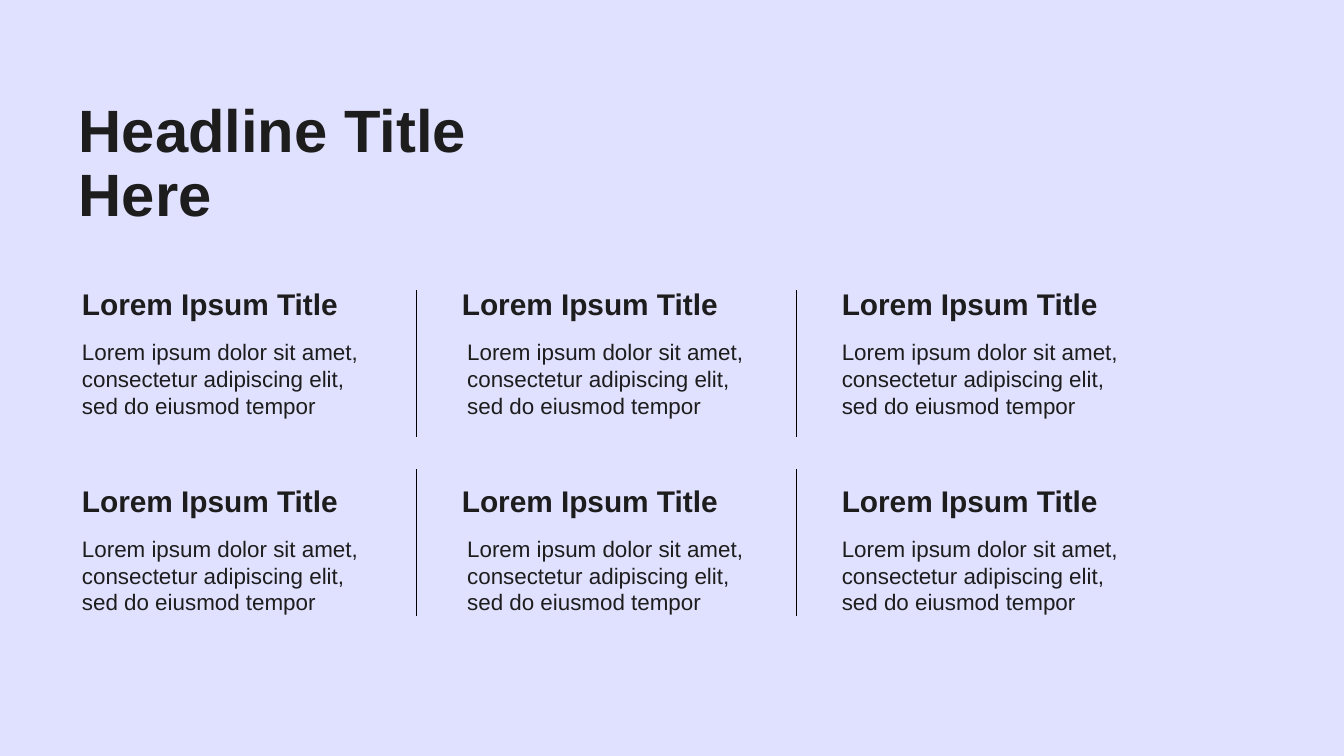
from lxml import etree
from pptx import Presentation
from pptx.dml.color import RGBColor
from pptx.enum.shapes import MSO_CONNECTOR
from pptx.enum.text import MSO_ANCHOR, PP_ALIGN
from pptx.oxml.ns import qn
from pptx.util import Cm, Pt

STRAIGHT = MSO_CONNECTOR.STRAIGHT
TOP = MSO_ANCHOR.TOP
LEFT = PP_ALIGN.LEFT

LAVENDER = RGBColor(0xE0, 0xE0, 0xFF)
INK = RGBColor(0x1D, 0x1D, 0x1D)
BLACK = RGBColor(0, 0, 0)
FONT = "Arial"

# Content
HEADLINE = "Headline Title\nHere"
CARD = (
    "Lorem Ipsum Title",
    "Lorem ipsum dolor sit amet, consectetur adipiscing elit, sed do eiusmod tempor",
)
CARD_ROWS = [[CARD] * 3, [CARD] * 3]

# Grid, in centimetres
CARD_LEFT, COLUMN_STEP = 1.3, 7.18
HEADING_TOP, BODY_TOP, ROW_STEP = 5.16, 6.15, 3.71
BODY_INDENTS = (0, 0.1, 0)
DIVIDER_LEFT, DIVIDER_TOP = 7.87, 5.49
DIVIDER_HEIGHT, DIVIDER_STEP = 2.77, 3.38


def write_text(shape, text, size, bold=False, line_spacing=None, space_after=None):
    frame = shape.text_frame
    frame.text = text
    frame.word_wrap = True
    frame.vertical_anchor = TOP
    frame.margin_left = frame.margin_right = Cm(0.25)
    frame.margin_top = frame.margin_bottom = Cm(0.25)
    for paragraph in frame.paragraphs:
        paragraph.alignment = LEFT
        paragraph.line_spacing = line_spacing
        paragraph.space_after = space_after
        for run in paragraph.runs:
            run.font.name = FONT
            run.font.size = Pt(size)
            run.font.bold = bold
            run.font.color.rgb = INK


def add_text(slide, left, top, width, height, text, size, **style):
    box = slide.shapes.add_textbox(Cm(left), Cm(top), Cm(width), Cm(height))
    write_text(box, text, size, **style)


def add_divider(slide, left, top):
    line = slide.shapes.add_connector(
        STRAIGHT, Cm(left), Cm(top), Cm(left), Cm(top + DIVIDER_HEIGHT)
    )
    line.line.color.rgb = BLACK
    line.line.width = Pt(0.75)
    etree.SubElement(line._element.spPr, qn("a:effectLst"))


def main():
    presentation = Presentation()
    presentation.slide_width, presentation.slide_height = Cm(25.4), Cm(14.29)
    slide = presentation.slides.add_slide(presentation.slide_layouts[5])
    slide.background.fill.solid()
    slide.background.fill.fore_color.rgb = LAVENDER

    # Headline
    title = slide.shapes.title
    title.left, title.top = Cm(1.24), Cm(1.65)
    title.width, title.height = Cm(12.27), Cm(3.51)
    write_text(title, HEADLINE, 32, bold=True, line_spacing=0.9)

    # Cards, with a divider between neighbouring columns
    for row, cards in enumerate(CARD_ROWS):
        for column, (heading, body) in enumerate(cards):
            left = CARD_LEFT + column * COLUMN_STEP
            down = row * ROW_STEP
            add_text(slide, left, HEADING_TOP + down, 5.97, 1.02, heading, 16, bold=True)
            add_text(slide, left + BODY_INDENTS[column], BODY_TOP + down, 6.07, 1.98,
                     body, 12, space_after=Pt(10) if column else None)
            if column:
                add_divider(slide, DIVIDER_LEFT + (column - 1) * COLUMN_STEP,
                            DIVIDER_TOP + row * DIVIDER_STEP)

    presentation.save("out.pptx")


if __name__ == "__main__":
    main()
